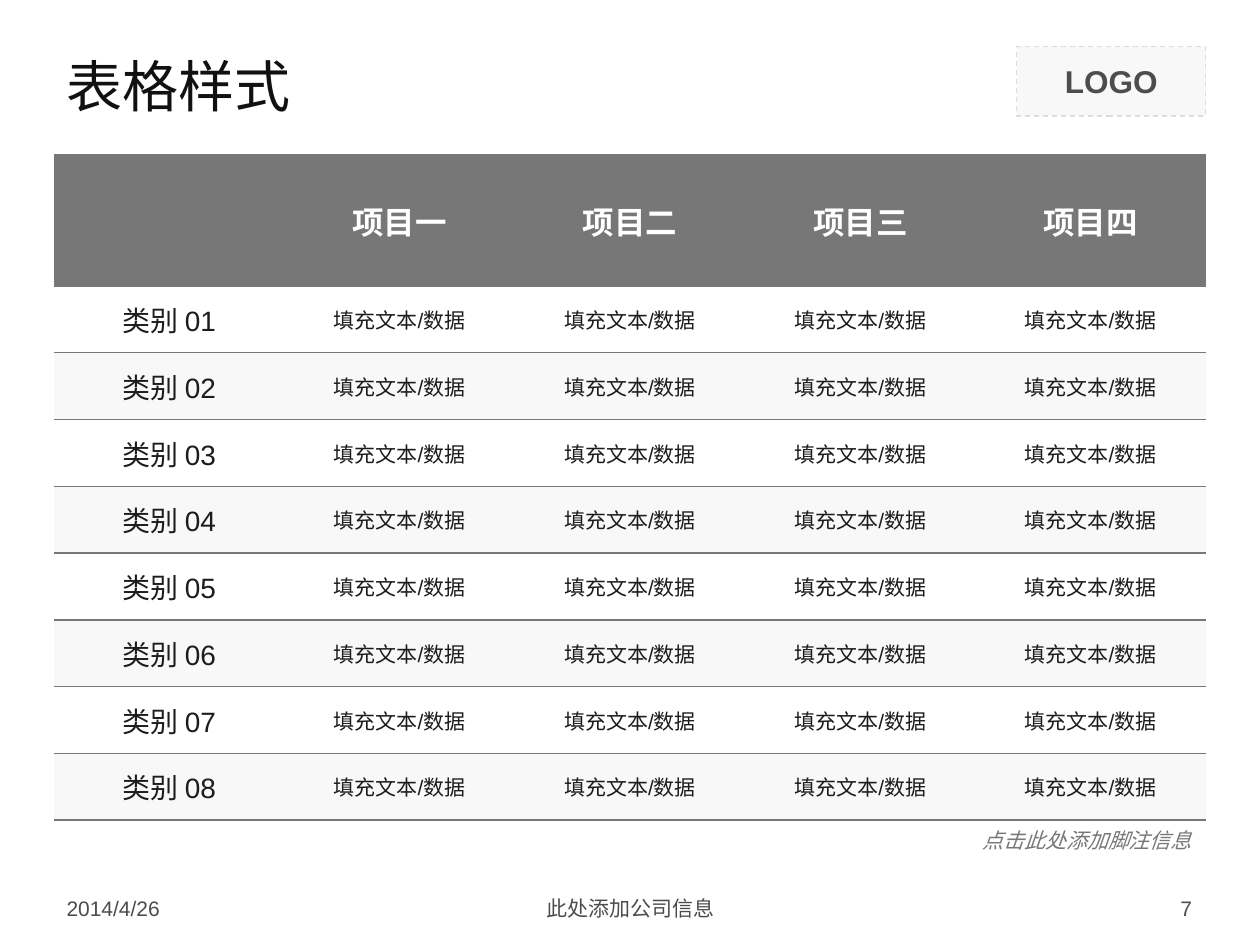
"""Build a table-style slide with a title, logo box, footnote and footer."""
from lxml import etree
from pptx import Presentation
from pptx.dml.color import RGBColor
from pptx.enum.dml import MSO_LINE
from pptx.enum.shapes import MSO_SHAPE
from pptx.enum.text import MSO_ANCHOR, MSO_AUTO_SIZE, PP_ALIGN
from pptx.oxml.ns import qn
from pptx.util import Inches, Pt

LEFT, CENTER, RIGHT = PP_ALIGN.LEFT, PP_ALIGN.CENTER, PP_ALIGN.RIGHT
MIDDLE, TOP = MSO_ANCHOR.MIDDLE, MSO_ANCHOR.TOP
DASH, RECT = MSO_LINE.DASH, MSO_SHAPE.RECTANGLE
FIT_SHAPE = MSO_AUTO_SIZE.SHAPE_TO_FIT_TEXT

WHITE = RGBColor(0xFF, 0xFF, 0xFF)
PALE = RGBColor(0xF8, 0xF8, 0xF8)
DASH_GRAY = RGBColor(0xDD, 0xDD, 0xDD)
GRAY = RGBColor(0x77, 0x77, 0x77)
LOGO_GRAY = RGBColor(0x4D, 0x4D, 0x4D)
FOOTER_GRAY = RGBColor(0x4C, 0x4C, 0x4C)
INK = RGBColor(0x1C, 0x1C, 0x1C)
TITLE_INK = RGBColor(0x11, 0x11, 0x11)

TITLE = "表格样式"
HEADERS = ["", "项目一", "项目二", "项目三", "项目四"]
ROWS = [[f"类别 {n:02d}"] + ["填充文本/数据"] * 4 for n in range(1, 9)]
FOOTERS = [
    ("2014/4/26", 0.43, 2.33, LEFT),
    ("此处添加公司信息", 3.42, 3.17, CENTER),
    ("7", 7.23, 2.33, RIGHT),
]
FOOTNOTE = "点击此处添加脚注信息"
MARGIN, TABLE_TOP, TABLE_W, TABLE_H, HEADER_H = 0.43, 1.23, 9.14, 5.28, 1.04


def write(tf, text, size, color, align=LEFT, anchor=MIDDLE, font="Arial", bold=False, italic=False):
    tf.text = text
    tf.vertical_anchor = anchor
    p = tf.paragraphs[0]
    p.alignment = align
    for r in p.runs:
        r.font.name, r.font.size = font, Pt(size)
        r.font.bold, r.font.italic = bold, italic
        r.font.color.rgb = color


def add_text(s, text, left, top, width, height, color, align, **style):
    tf = s.shapes.add_textbox(*map(Inches, (left, top, width, height))).text_frame
    tf.word_wrap = True
    write(tf, text, 12, color, align, **style)
    return tf


def set_borders(cell):
    tc_pr = cell._tc.get_or_add_tcPr()
    for side in ("lnL", "lnR", "lnT", "lnB"):
        ln = etree.SubElement(tc_pr, qn(f"a:{side}"), w=str(Pt(1)))
        if side in ("lnL", "lnR"):
            etree.SubElement(ln, qn("a:noFill"))
        else:
            fill = etree.SubElement(ln, qn("a:solidFill"))
            etree.SubElement(fill, qn("a:srgbClr"), val=str(GRAY))


def add_grid(s):
    data = [HEADERS] + ROWS
    box = map(Inches, (MARGIN, TABLE_TOP, TABLE_W, TABLE_H))
    table = s.shapes.add_table(len(data), len(HEADERS), *box).table
    for i, values in enumerate(data):
        table.rows[i].height = Inches((TABLE_H - HEADER_H) / len(ROWS) if i else HEADER_H)
        for j, value in enumerate(values):
            cell = table.cell(i, j)
            set_borders(cell)
            cell.fill.solid()
            cell.fill.fore_color.rgb = GRAY if i == 0 else WHITE if i % 2 else PALE
            size = 18 if i == 0 else 12 if j else 16
            write(cell.text_frame, value, size, INK if i else WHITE, CENTER, bold=i == 0)
            cell.vertical_anchor = MIDDLE


def add_logo_box(s):
    sp = s.shapes.add_shape(RECT, *map(Inches, (8.07, 0.37, 1.5, 0.55)))
    sp.shadow.inherit = False
    sp.fill.solid()
    sp.fill.fore_color.rgb = PALE
    sp.line.color.rgb = DASH_GRAY
    sp.line.width = Pt(0.75)
    sp.line.dash_style = DASH
    write(sp.text_frame, "LOGO", 18, LOGO_GRAY, CENTER, bold=True)


def main():
    prs = Presentation()
    prs.slide_width, prs.slide_height = Inches(10), Inches(7.5)
    s = prs.slides.add_slide(prs.slide_layouts[5])
    title = s.shapes.title
    title.left, title.top, title.width, title.height = map(Inches, (MARGIN, 0.28, TABLE_W, 0.79))
    write(title.text_frame, TITLE, 32, TITLE_INK, font="Montserrat")
    add_logo_box(s)
    add_grid(s)
    for text, left, width, align in FOOTERS:
        add_text(s, text, left, 7.06, width, 0.29, FOOTER_GRAY, align)
    tf = add_text(s, FOOTNOTE, 7.68, 6.52, 1.88, 0.3, GRAY, RIGHT, anchor=TOP, italic=True)
    tf.word_wrap = False
    tf.auto_size = FIT_SHAPE
    prs.save("out.pptx")


if __name__ == "__main__":
    main()
